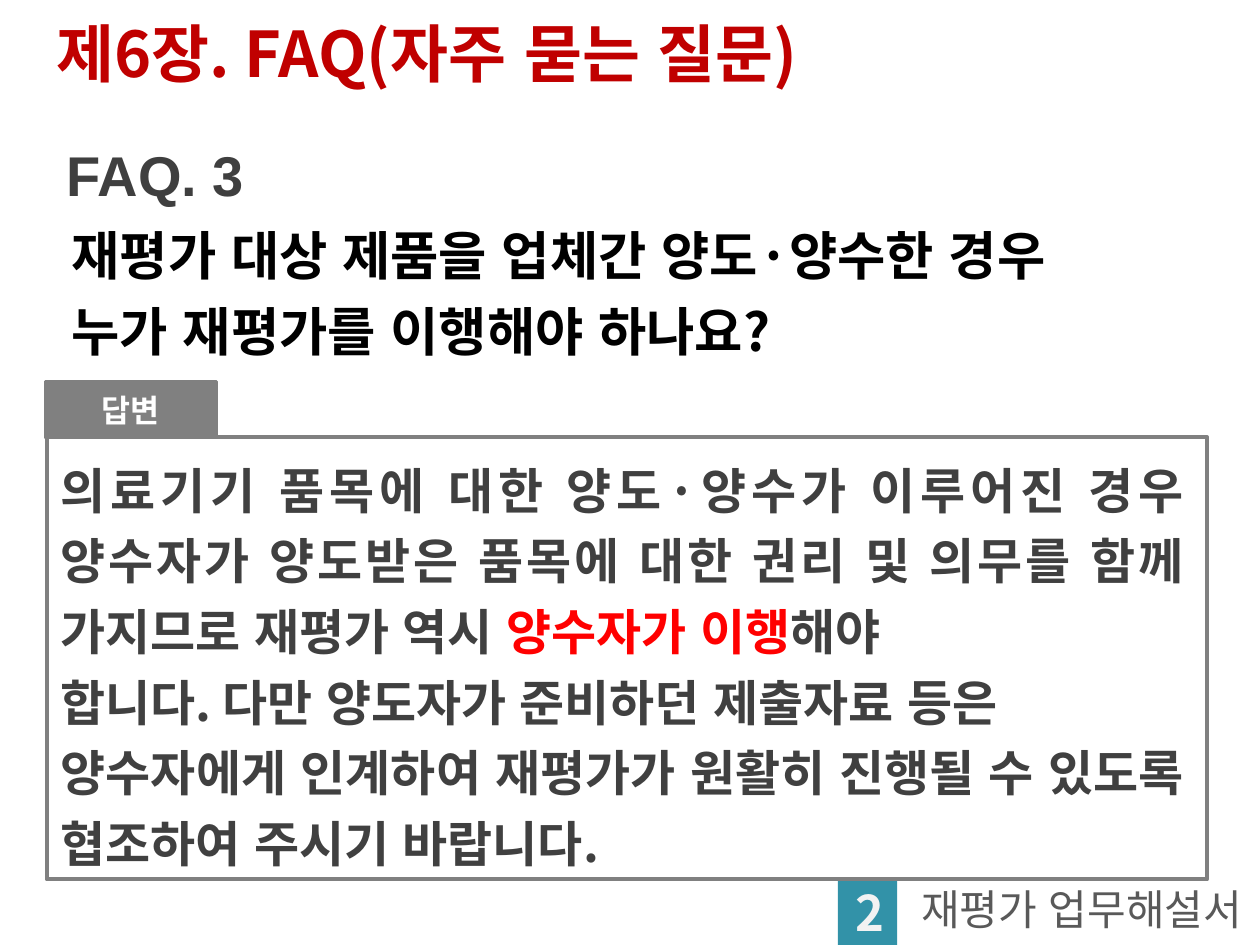
from lxml import etree
from pptx import Presentation
from pptx.dml.color import RGBColor
from pptx.enum import lang, shapes, text
from pptx.oxml import ns
from pptx.util import Inches, Pt

KOREAN = "Noto Sans CJK KR"
COLORS = {
    "title": "C00000",
    "label": "3F3F3F",
    "question": "000000",
    "answer": "404040",
    "stress": "FF0000",
    "frame": "808080",
    "tab": "FFFFFF",
    "number": "F2F2F2",
    "number_box": "3292A8",
    "footer": "595959",
}


def color(name):
    return RGBColor.from_string(COLORS[name])


def place(item, box):
    item.left, item.top, item.width, item.height = (Inches(n) for n in box)


def write(item, lines, size, ink, font=KOREAN, bold=True,
          align=text.PP_ALIGN.LEFT, anchor=text.MSO_ANCHOR.TOP, spacing=1.0):
    """Fill an item with paragraphs; each line is a list of (words, color or None)."""
    frame = item.text_frame
    frame.word_wrap = True
    frame.auto_size = text.MSO_AUTO_SIZE.NONE
    frame.vertical_anchor = anchor
    for index, line in enumerate(lines):
        para = frame.add_paragraph() if index else frame.paragraphs[0]
        para.alignment = align
        para.line_spacing = spacing
        para.space_before = Pt(0)
        if item.is_placeholder:
            props = para._p.get_or_add_pPr()
            props.set("marL", "0")
            props.set("indent", "0")
            etree.SubElement(props, ns.qn("a:buNone"))
        para.font.size = Pt(size)
        para.font.bold = bold
        para.font.name = font
        para.font.color.rgb = color(ink)
        east_asian = etree.Element(ns.qn("a:ea"), typeface=font)
        para.font._element.find(ns.qn("a:latin")).addnext(east_asian)
        for words, accent in line:
            span = para.add_run()
            span.text = words
            span.font.language_id = lang.MSO_LANGUAGE_ID.KOREAN
            if accent:
                span.font.color.rgb = color(accent)


def add_text(page, box, lines, size, ink, **style):
    item = page.shapes.add_textbox(*(Inches(n) for n in box))
    write(item, lines, size, ink, **style)


def add_box(page, box, fill=None, line=None, weight=2):
    item = page.shapes.add_shape(shapes.MSO_SHAPE.RECTANGLE, *(Inches(n) for n in box))
    item.shadow.inherit = False
    if fill:
        item.fill.solid()
        item.fill.fore_color.rgb = color(fill)
    else:
        item.fill.background()
    if line:
        item.line.color.rgb = color(line)
        item.line.width = Pt(weight)
    else:
        item.line.fill.background()
    return item


def add_footer(page, left, top):
    add_text(page, (left + 0.4, top + 0.03, 3.07, 0.46), [[("재평가 업무해설서", None)]],
             24, "footer", bold=False, align=text.PP_ALIGN.CENTER, spacing=0.9)
    number = add_box(page, (left, top, 0.47, 0.52), fill="number_box")
    write(number, [[("2", None)]], 28, "number",
          align=text.PP_ALIGN.RIGHT, anchor=text.MSO_ANCHOR.MIDDLE)


def add_title(page, box):
    place(page.shapes.title, box)
    write(page.shapes.title, [[("제6장. FAQ(자주 묻는 질문)", None)]], 36, "title", spacing=0.9)


def add_question(page, left, top):
    add_text(page, (left, top, 7.44, 0.64), [[("FAQ. 3", None)]], 32, "label", font="Arial")
    lines = [[("재평가 대상 제품을 업체간 양도·양수한 경우", None)],
             [("누가 재평가를 이행해야 하나요?", None)]]
    add_text(page, (left + 0.04, top + 0.55, 9.18, 1.25), lines, 30, "question",
             align=text.PP_ALIGN.JUSTIFY, spacing=1.2)


def add_answer(page, left, top, width, height):
    # Answer text
    body = page.placeholders[1]
    place(body, (left + 0.01, top + 0.04, width - 0.09, height - 0.02))
    lines = [
        [("의료기기 품목에 대한 양도·양수가 이루어진 경우 양수자가 양도받은 품목에 대한 "
          "권리 및 의무를 함께 가지므로 재평가 역시 ", None),
         ("양수자가 이행", "stress"), ("해야", None)],
        [("합니다. 다만 양도자가 준비하던 제출자료 등은", None)],
        [("양수자에게 인계하여 재평가가 원활히 진행될 수 있도록 협조하여 주시기 바랍니다.", None)],
    ]
    write(body, lines, 28, "answer", align=text.PP_ALIGN.JUSTIFY, spacing=1.2)

    # Frame and its tab
    add_box(page, (left, top, width, height), line="frame", weight=2.25)
    tab = add_box(page, (left - 0.01, top - 0.44, 1.36, 0.44), fill="frame", line="frame")
    write(tab, [[("답변", None)]], 18, "tab",
          align=text.PP_ALIGN.CENTER, anchor=text.MSO_ANCHOR.MIDDLE)


def main():
    deck = Presentation()
    deck.slide_width, deck.slide_height = Inches(10), Inches(7.5)
    page = deck.slides.add_slide(deck.slide_layouts[1])
    add_footer(page, 6.65, 6.98)
    add_title(page, (0.35, 0.13, 8.82, 1.1))
    add_question(page, 0.43, 1.07)
    add_answer(page, 0.37, 3.47, 9.21, 3.51)
    deck.save("out.pptx")


if __name__ == "__main__":
    main()
